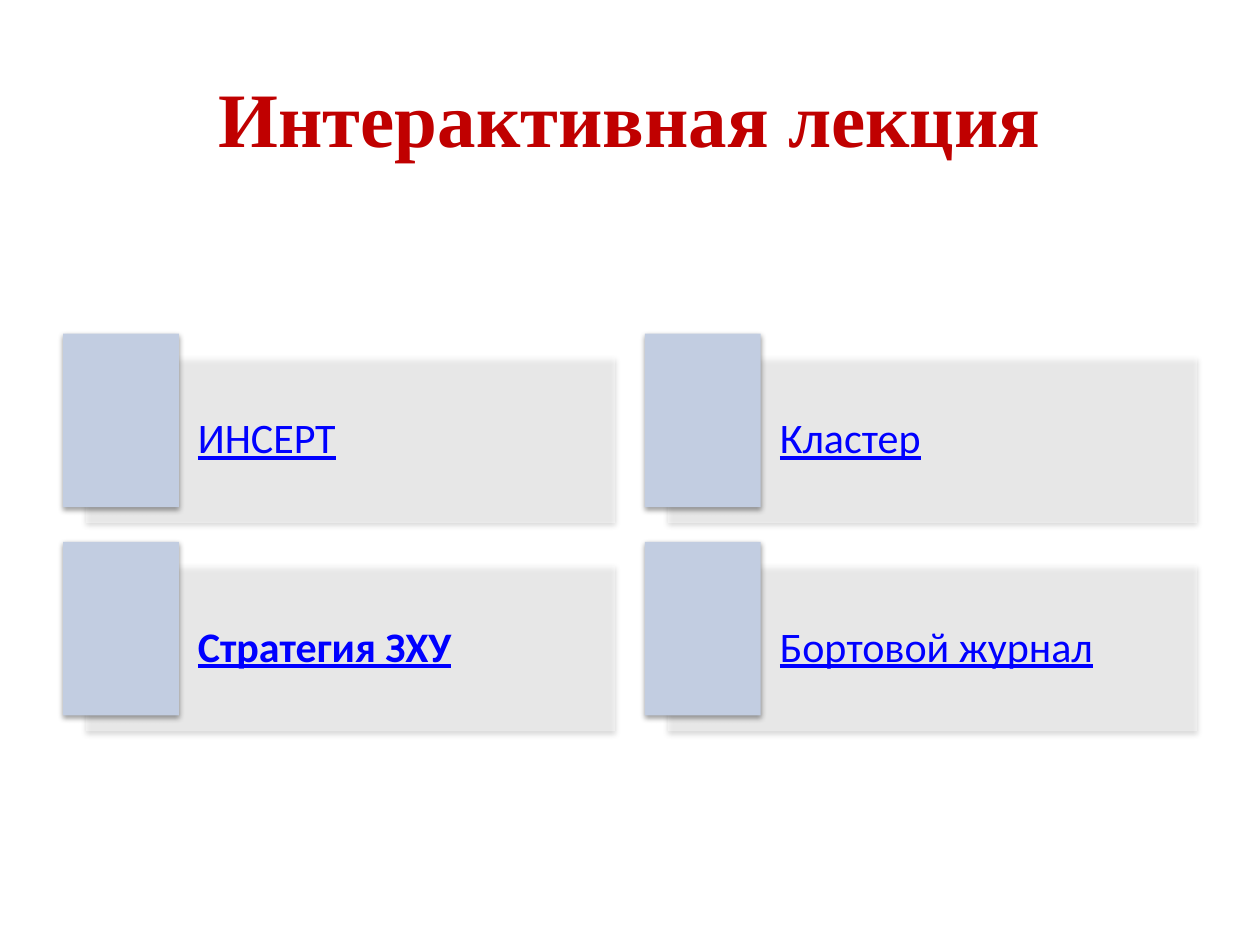
from itertools import product
from lxml.etree import SubElement
from pptx import Presentation
from pptx.dml.color import RGBColor
from pptx.enum.shapes import MSO_SHAPE
from pptx.enum.text import MSO_ANCHOR, PP_ALIGN
from pptx.oxml.ns import qn
from pptx.util import Pt

HUES = {"title": "C00000", "link": "0000FF", "tab": "C2CDE1", "panel": "FFFFFF", "shade": "000000"}
TITLE = {"name": "Times New Roman", "size": Pt(44), "bold": True}
LINK = {"name": "Calibri", "size": Pt(24), "underline": True}
ITEMS = [("ИНСЕРТ", False), ("Кластер", False), ("Стратегия ЗХУ", True), ("Бортовой журнал", False)]


def apply(item, form):
    for key, val in form.items():
        setattr(item, key, val)


class Deck:
    def __init__(self):
        self.show = Presentation()
        apply(self.show, {"slide_width": Pt(720), "slide_height": Pt(540)})
        self.slide = self.show.slides.add_slide(self.show.slide_layouts[6])

    def text(self, words, area, hue, font, para, pads):
        frame = self.slide.shapes.add_textbox(*map(Pt, area)).text_frame
        sides = ("margin_left", "margin_top", "margin_right", "margin_bottom")
        apply(frame, dict(zip(sides, map(Pt, pads))))
        apply(frame, {"word_wrap": True, "vertical_anchor": MSO_ANCHOR.MIDDLE})
        line = frame.paragraphs[0]
        apply(line, para)
        run = line.add_run()
        run.text = words
        apply(run.font, font)
        run.font.color.rgb = RGBColor.from_string(HUES[hue])

    def block(self, area, hue, alpha=None):
        shape = self.slide.shapes.add_shape(MSO_SHAPE.RECTANGLE, *map(Pt, area))
        shape.fill.solid()
        shape.fill.fore_color.rgb = RGBColor.from_string(HUES[hue])
        shape.line.fill.background()
        shape.shadow.inherit = False
        props = shape.element.spPr
        if alpha:
            tint = props.find(qn("a:solidFill")).find(qn("a:srgbClr"))
            SubElement(tint, qn("a:alpha"), val=str(alpha * 1000))
        glow = SubElement(props.find(qn("a:effectLst")), qn("a:outerShdw"),
                          blurRad=str(Pt(3.15)), dist=str(Pt(1.57)), dir="5400000", rotWithShape="0")
        shade = SubElement(glow, qn("a:srgbClr"), val=HUES["shade"])
        SubElement(shade, qn("a:alpha"), val="38000")

    def card(self, words, bold, left, top):
        area = (left + 13.1, top + 13.7, 302.4, 94.5)
        self.block(area, "panel", 40)
        para = {"line_spacing": 0.9, "space_after": Pt(8.4)}
        self.text(words, area, "link", {**LINK, "bold": bold}, para, (64, 7.2, 7.2, 7.2))
        self.block((left, top, 66.2, 99.2), "tab")


def main():
    deck = Deck()
    deck.text("Интерактивная лекция", (36, 21.6, 648, 90), "title", TITLE,
              {"alignment": PP_ALIGN.CENTER}, (7.2, 3.6, 7.2, 3.6))
    for (words, bold), (row, col) in zip(ITEMS, product(range(2), repeat=2)):
        deck.card(words, bold, 36 + col * 332.5, 190.6 + row * 119)
    deck.show.save("out.pptx")


if __name__ == "__main__":
    main()
